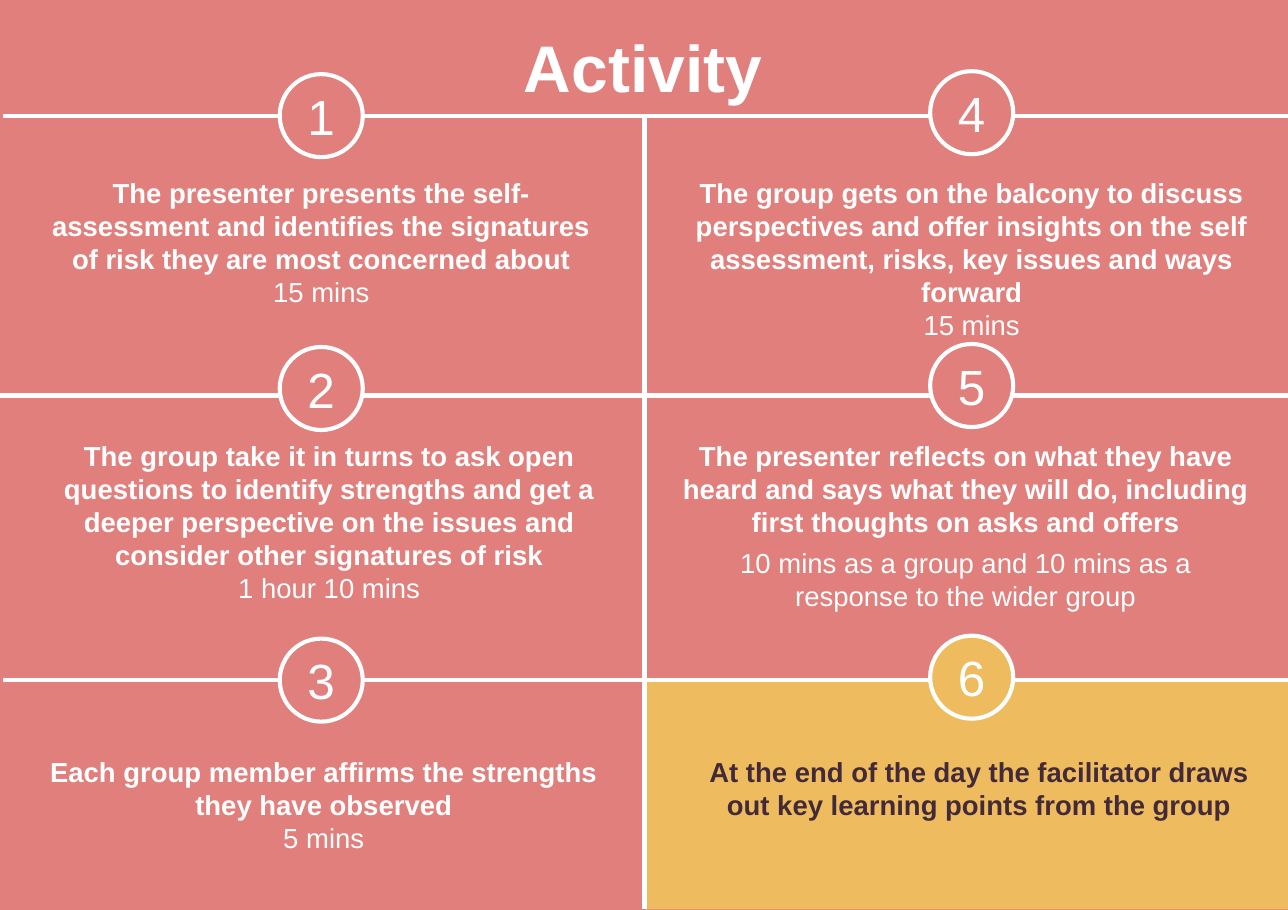
from dataclasses import dataclass

from lxml import etree
from pptx import Presentation
from pptx.dml.color import RGBColor
from pptx.enum.shapes import MSO_CONNECTOR, MSO_SHAPE
from pptx.enum.text import MSO_ANCHOR, MSO_AUTO_SIZE, PP_ALIGN
from pptx.oxml.ns import qn
from pptx.util import Inches, Pt

STRAIGHT = MSO_CONNECTOR.STRAIGHT
RECT, OVAL = MSO_SHAPE.RECTANGLE, MSO_SHAPE.OVAL
TOP, MIDDLE = MSO_ANCHOR.TOP, MSO_ANCHOR.MIDDLE
CENTER, NO_FIT = PP_ALIGN.CENTER, MSO_AUTO_SIZE.NONE
TITLE_ONLY = 5


@dataclass(frozen=True)
class Theme:
    font: str = "Arial"
    coral: str = "E17F7C"
    gold: str = "EEBC5F"
    white: str = "FFFFFF"
    plum: str = "422A39"
    title_pt: int = 48
    number_pt: int = 36
    body_pt: int = 20
    line_pt: int = 3


@dataclass(frozen=True)
class Step:
    left: float
    width: float
    task: str
    time: str = ""
    before: int = 6
    time_apart: bool = False
    highlight: bool = False


THEME = Theme()
# Page size is set in points, 72 to the inch
WIDTH, HEIGHT = 938.13 / 72, 662.75 / 72
MIDDLE_X = 6.52
BADGE_SIZE = 0.84

# Grid: badges and text share three rows, read down each column
BADGE_LEFTS = (2.83, 9.41)
BADGE_TOPS = (0.75, 3.51, 6.46)
RIGHT_BADGE_RISE = 0.03
TEXT_TOPS = (1.68, 4.34, 7.54)
TEXT_HEIGHT = 0.78

RULES = (
    (MIDDLE_X, 1.15, MIDDLE_X, 9.19),
    (-0.03, 4, 13.05, 4),
    (0.03, 6.88, 13.05, 6.88),
    (0.03, 1.17, 13.05, 1.17),
)

STEPS = (
    Step(0.27, 5.96, "The presenter presents the self-assessment and identifies "
         "the signatures of risk they are most concerned about", "15 mins",
         before=0, time_apart=True),
    Step(0.27, 6.12, "The group take it in turns to ask open questions to identify "
         "strengths and get a deeper perspective on the issues and consider "
         "other signatures of risk", "1 hour 10 mins"),
    Step(0.38, 5.79, "Each group member affirms the strengths they have observed",
         "5 mins"),
    Step(6.65, 6.36, "The group gets on the balcony to discuss perspectives and "
         "offer insights on the self assessment, risks, key issues and ways forward",
         "15 mins"),
    Step(6.79, 5.96, "The presenter reflects on what they have heard and says what "
         "they will do, including first thoughts on asks and offers",
         "10 mins as a group and 10 mins as a response to the wider group",
         time_apart=True),
    Step(7.01, 5.79, "At the end of the day the facilitator draws out key learning "
         "points from the group", highlight=True),
)


def rgb(color: str) -> RGBColor:
    return RGBColor.from_string(color)


def add_text(p, text: str, *, size: int, color: str = THEME.white,
             bold: bool = False, before: int = 0) -> None:
    p.alignment = CENTER
    p.space_before = Pt(before)
    r = p.add_run()
    r.text = text
    r.font.name = THEME.font
    r.font.size = Pt(size)
    r.font.bold = bold
    r.font.color.rgb = rgb(color)


def set_frame(tf, anchor, x_inset: float = 0.1, y_inset: float = 0.1) -> None:
    tf.word_wrap = True
    tf.auto_size = NO_FIT
    tf.vertical_anchor = anchor
    tf.margin_left = tf.margin_right = Inches(x_inset)
    tf.margin_top = tf.margin_bottom = Inches(y_inset)


def add_shape(slide, kind, left: float, top: float, width: float,
              height: float, fill: str, outlined: bool = False):
    sp = slide.shapes.add_shape(kind, Inches(left), Inches(top),
                                Inches(width), Inches(height))
    sp.shadow.inherit = False
    sp.fill.solid()
    sp.fill.fore_color.rgb = rgb(fill)
    if outlined:
        sp.line.color.rgb = rgb(THEME.white)
        sp.line.width = Pt(THEME.line_pt)
    else:
        sp.line.fill.background()
    return sp


def add_rule(slide, x1: float, y1: float, x2: float, y2: float) -> None:
    line = slide.shapes.add_connector(STRAIGHT, Inches(x1), Inches(y1),
                                      Inches(x2), Inches(y2))
    line.line.color.rgb = rgb(THEME.white)
    line.line.width = Pt(THEME.line_pt)
    etree.SubElement(line._element.spPr, qn("a:effectLst"))


def add_step(slide, index: int, step: Step) -> None:
    column, row = divmod(index, len(BADGE_TOPS))

    # Numbered badge
    badge = add_shape(slide, OVAL, BADGE_LEFTS[column],
                      BADGE_TOPS[row] - column * RIGHT_BADGE_RISE,
                      BADGE_SIZE, BADGE_SIZE,
                      THEME.gold if step.highlight else THEME.coral, outlined=True)
    set_frame(badge.text_frame, MIDDLE)
    add_text(badge.text_frame.paragraphs[0], str(index + 1), size=THEME.number_pt)

    # Task, then its time on a new line or in its own paragraph
    box = slide.shapes.add_textbox(Inches(step.left), Inches(TEXT_TOPS[row]),
                                   Inches(step.width), Inches(TEXT_HEIGHT))
    tf = box.text_frame
    set_frame(tf, TOP)
    p = tf.paragraphs[0]
    add_text(p, step.task, size=THEME.body_pt, bold=True, before=step.before,
             color=THEME.plum if step.highlight else THEME.white)
    if step.time:
        if step.time_apart:
            p = tf.add_paragraph()
        else:
            p.add_line_break()
        add_text(p, step.time, size=THEME.body_pt, before=step.before)


def add_title(slide, text: str) -> None:
    title = slide.shapes.title
    title.left, title.top = Inches(4.51), Inches(0.21)
    title.width, title.height = Inches(3.99), Inches(0.78)
    set_frame(title.text_frame, TOP, 0.13, 0.06)
    add_text(title.text_frame.paragraphs[0], text, size=THEME.title_pt, bold=True)


def main() -> None:
    prs = Presentation()
    prs.slide_width, prs.slide_height = Inches(WIDTH), Inches(HEIGHT)
    slide = prs.slides.add_slide(prs.slide_layouts[TITLE_ONLY])
    slide.background.fill.solid()
    slide.background.fill.fore_color.rgb = rgb(THEME.coral)

    add_title(slide, "Activity")

    # Highlighted cell and dividing lines
    add_shape(slide, RECT, MIDDLE_X, 6.88, 6.54, 2.32, THEME.gold)
    for rule in RULES:
        add_rule(slide, *rule)

    for index, step in enumerate(STEPS):
        add_step(slide, index, step)

    prs.save("out.pptx")


if __name__ == "__main__":
    main()
